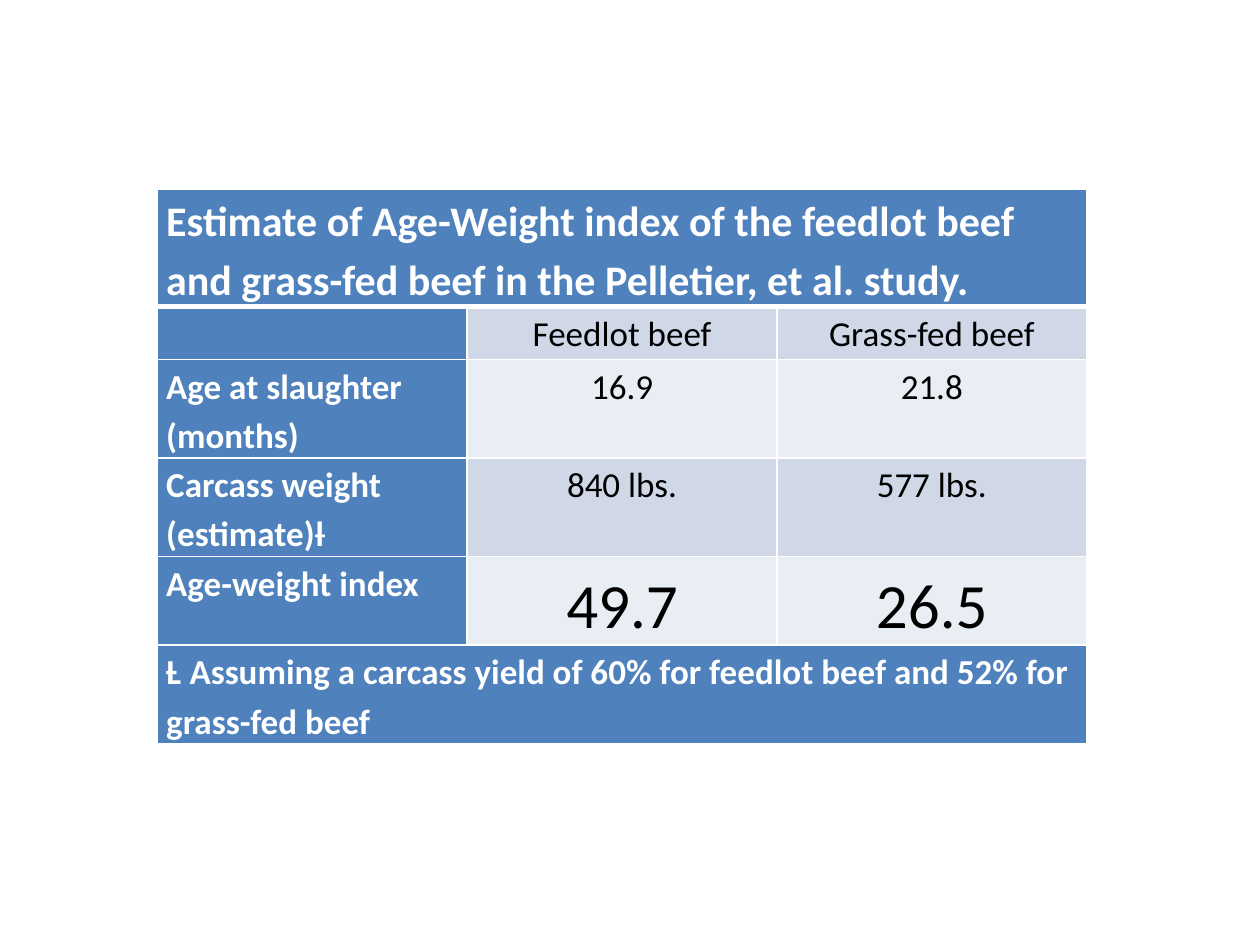
import pptx
import pptx.util
import pptx.dml.color
import pptx.enum.text
import pptx.oxml
import pptx.oxml.ns

Pt = pptx.util.Pt
Align = pptx.enum.text.PP_ALIGN
BLUE, WHITE, BLACK = "4F81BD", "FFFFFF", "000000"
BANDS = ["D0D8E8", "E9EDF4"]


def paint(fmt, tone):
    fmt.rgb = pptx.dml.color.RGBColor.from_string(tone)


def edge(cell, side, width):
    line = pptx.oxml.parse_xml(
        f'<a:{side} {pptx.oxml.ns.nsdecls("a")} w="{Pt(width)}">'
        f'<a:solidFill><a:srgbClr val="{WHITE}"/></a:solidFill></a:{side}>')
    cell._tc.get_or_add_tcPr().insert(0, line)


deck = pptx.Presentation()
deck.slide_width, deck.slide_height = Pt(720), Pt(540)
slide = deck.slides.add_slide(deck.slide_layouts[6])

# Contents: one text spans the full row
rows = [
    ["Estimate of Age-Weight index of the feedlot beef and grass-fed beef "
     "in the Pelletier, et al. study."],
    ["", "Feedlot beef", "Grass-fed beef"],
    ["Age at slaughter (months)", "16.9", "21.8"],
    ["Carcass weight (estimate)ƚ", "840 lbs.", "577 lbs."],
    ["Age-weight index", "49.7", "26.5"],
    ["Ƚ Assuming a carcass yield of 60% for feedlot beef and 52% for "
     "grass-fed beef"],
]
sizes = {(0, 0): 24, (4, 1): 36, (4, 2): 36}
inset = {"margin_left": Pt(5), "margin_right": Pt(5),
         "margin_top": 0, "margin_bottom": 0}

# Table grid
table = slide.shapes.add_table(
    len(rows), 3, Pt(90), Pt(108), Pt(531), Pt(212)).table
for col in table.columns:
    col.width = Pt(177)
for r, row in enumerate(table.rows):
    row.height = Pt(62 if r == 0 else 30)

# Cells
for r, texts in enumerate(rows):
    span = len(texts) == 1
    if span:
        table.cell(r, 0).merge(table.cell(r, 2))
    for c in range(3):
        cell = table.cell(r, c)
        head = span or c == 0
        for name, value in inset.items():
            setattr(cell, name, value)
        cell.fill.solid()
        paint(cell.fill.fore_color, BLUE if head else BANDS[(r + 1) % 2])
        thick = {0: "lnB", 1: "lnT"}.get(r)
        for side in ["lnB", "lnT", "lnR", "lnL"]:
            edge(cell, side, 3 if side == thick else 1)
        if c >= len(texts) or not texts[c]:
            continue
        para = cell.text_frame.paragraphs[0]
        para.line_spacing = 1.15
        para.alignment = Align.LEFT if head else Align.CENTER
        run = para.add_run()
        run.text = texts[c]
        style = {"name": "Calibri", "size": Pt(sizes.get((r, c), 20)),
                 "bold": head}
        for name, value in style.items():
            setattr(run.font, name, value)
        paint(run.font.color, WHITE if head else BLACK)

deck.save("out.pptx")
